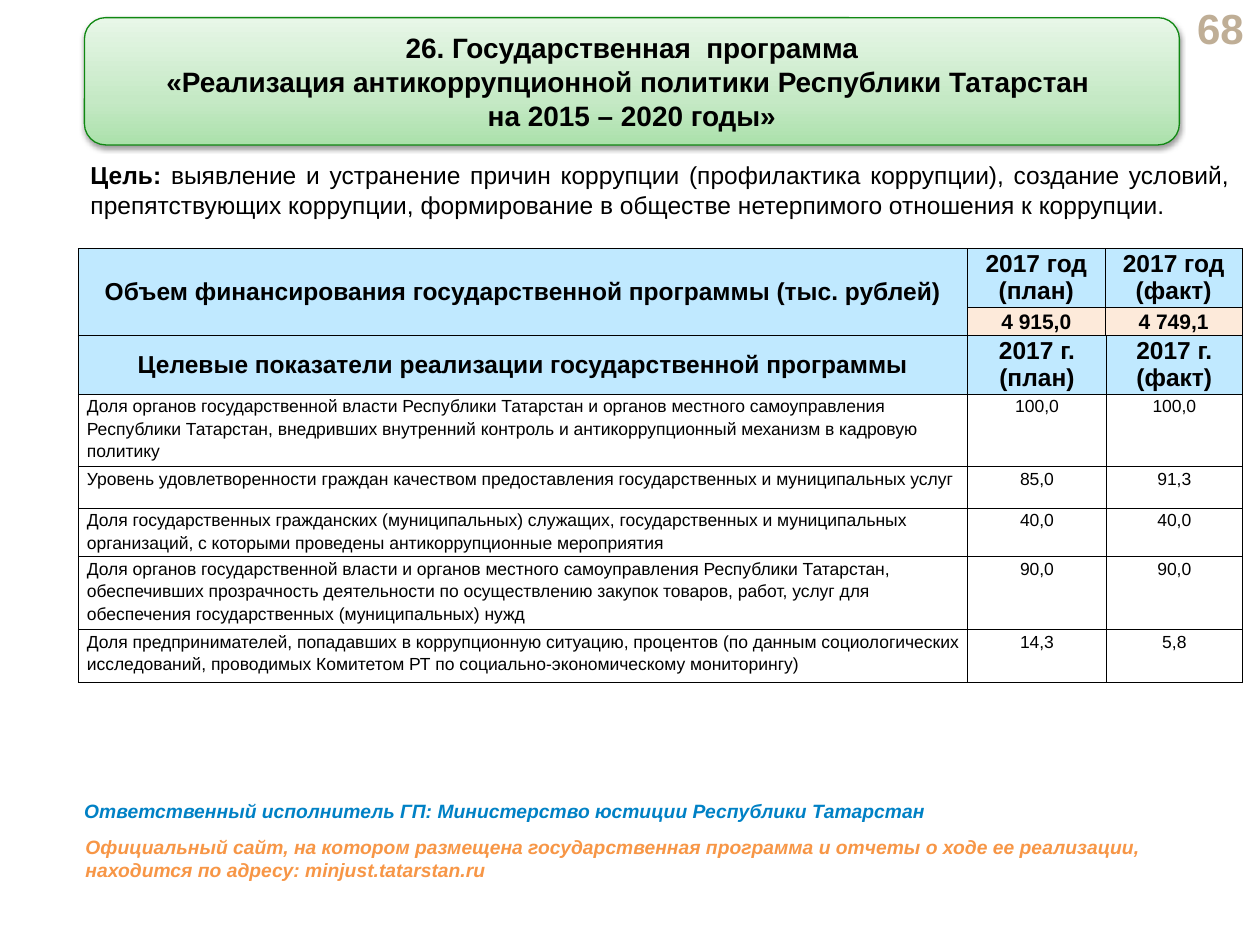
from lxml import etree
from pptx import Presentation
from pptx.dml.color import RGBColor
from pptx.enum import shapes, text
from pptx.oxml import ns
from pptx.util import Inches, Pt

TITLE = [
    "26. Государственная  программа",
    "«Реализация антикоррупционной политики Республики Татарстан ",
    "на 2015 – 2020 годы»",
]
GOAL = [
    ("Цель: ", True),
    ("выявление и устранение причин коррупции (профилактика коррупции), создание условий, "
     "препятствующих коррупции, формирование в обществе нетерпимого отношения к коррупции.", False),
]
FUNDING = [
    ("Объем финансирования государственной программы (тыс. рублей)", "2017 год (план)", "2017 год (факт)"),
    ("", "4 915,0", "4 749,1"),
]
INDICATORS = [
    ("Целевые показатели реализации государственной программы", "2017 г. (план)", "2017 г. (факт)"),
    ("Доля органов государственной власти Республики Татарстан и органов местного самоуправления "
     "Республики Татарстан, внедривших внутренний контроль и антикоррупционный механизм в кадровую "
     "политику", "100,0", "100,0"),
    ("Уровень удовлетворенности граждан качеством предоставления государственных и муниципальных услуг",
     "85,0", "91,3"),
    ("Доля государственных гражданских (муниципальных) служащих, государственных и муниципальных "
     "организаций, с которыми проведены антикоррупционные мероприятия", "40,0", "40,0"),
    ("Доля органов государственной власти и органов местного самоуправления Республики Татарстан, "
     "обеспечивших прозрачность деятельности по осуществлению закупок товаров, работ, услуг для "
     "обеспечения государственных (муниципальных) нужд", "90,0", "90,0"),
    ("Доля предпринимателей, попадавших в коррупционную ситуацию, процентов (по данным социологических "
     "исследований, проводимых Комитетом РТ по социально-экономическому мониторингу)", "14,3", "5,8"),
]
EXECUTOR = "Ответственный исполнитель ГП: Министерство юстиции Республики Татарстан"
SITE = ("Официальный сайт, на котором размещена государственная программа и отчеты о ходе ее реализации, "
        "находится по адресу: minjust.tatarstan.ru")

BLACK, BLUE, PEACH = "000000", "C0E9FF", "FDEADA"
TITLE_STOPS = [(0, "ABE1AB"), (35, "C5E9C5"), (100, "E8F7E8")]
LEFT, CENTER, RIGHT, JUSTIFY = (
    text.PP_ALIGN.LEFT, text.PP_ALIGN.CENTER, text.PP_ALIGN.RIGHT, text.PP_ALIGN.JUSTIFY)
TOP, MIDDLE = text.MSO_ANCHOR.TOP, text.MSO_ANCHOR.MIDDLE


def rgb(value):
    return RGBColor.from_string(value)


def node(parent, tag, **attrs):
    return etree.SubElement(parent, ns.qn(tag), {k: str(v) for k, v in attrs.items()})


def write(tf, lines, size=14, color=BLACK, bold=True, italic=False, align=LEFT, spacing=None):
    tf.word_wrap = True
    for i, line in enumerate(lines):
        p = tf.paragraphs[0] if i == 0 else tf.add_paragraph()
        p.alignment = align
        if spacing:
            p.line_spacing = spacing
        for words, weight in [(line, bold)] if isinstance(line, str) else line:
            r = p.add_run()
            r.text = words
            r.font.name, r.font.size = "Arial", Pt(size)
            r.font.bold, r.font.italic = weight, italic
            r.font.color.rgb = rgb(color)


def add_text(s, box, lines, anchor=TOP, **fmt):
    tf = s.shapes.add_textbox(*map(Inches, box)).text_frame
    tf.vertical_anchor = anchor
    write(tf, lines, **fmt)


def add_title(s, box):
    sp = s.shapes.add_shape(shapes.MSO_SHAPE.ROUNDED_RECTANGLE, *map(Inches, box))
    sp.line.color.rgb, sp.line.width = rgb("108812"), Pt(0.75)
    sp.fill.gradient()
    sp.fill.gradient_angle = 90
    stops = sp._element.spPr.find(".//" + ns.qn("a:gsLst"))
    for old in list(stops):
        stops.remove(old)
    for position, color in TITLE_STOPS:
        node(node(stops, "a:gs", pos=position * 1000), "a:srgbClr", val=color)
    sp.shadow.inherit = False
    effects = sp._element.spPr.find(ns.qn("a:effectLst"))
    shadow = node(effects, "a:outerShdw", blurRad=40000, dist=20000, dir=5400000, rotWithShape=0)
    node(node(shadow, "a:srgbClr", val=BLACK), "a:alpha", val=38000)
    sp.text_frame.vertical_anchor = MIDDLE
    write(sp.text_frame, TITLE, size=16, align=CENTER)


def add_borders(cell):
    tc_pr = cell._tc.get_or_add_tcPr()
    for side in ("a:lnL", "a:lnR", "a:lnT", "a:lnB"):
        line = node(tc_pr, side, w=Pt(0.25))
        node(node(line, "a:solidFill"), "a:srgbClr", val=BLACK)


def add_grid(s, top, rows, widths, heights, styles):
    frame = s.shapes.add_table(len(rows), len(widths), Inches(0.62), Inches(top),
                               Inches(sum(widths)), Inches(sum(heights)))
    table = frame.table
    table.first_row = table.horz_banding = False
    for column, width in zip(table.columns, widths):
        column.width = Inches(width)
    for i, (row, height, style) in enumerate(zip(rows, heights, styles)):
        table.rows[i].height = Inches(height)
        for j, words in enumerate(row):
            cell = table.cell(i, j)
            add_borders(cell)
            cell.margin_left = cell.margin_right = Inches(style["inset"])
            cell.margin_top = cell.margin_bottom = 0
            cell.vertical_anchor = style["anchor"]
            if style["fill"]:
                cell.fill.solid()
                cell.fill.fore_color.rgb = rgb(style["fill"])
            else:
                cell.fill.background()
            if words:
                align = style["label_align"] if j == 0 else CENTER
                write(cell.text_frame, [words], align=align, **style["font"])
    return table


HEAD = dict(fill=BLUE, inset=0.06, anchor=MIDDLE, label_align=CENTER, font=dict(size=14))
AMOUNT = dict(HEAD, fill=PEACH, font=dict(size=12))
BODY = dict(fill=None, inset=0.07, anchor=TOP, label_align=LEFT,
            font=dict(size=10, bold=False, spacing=1.15))


def main():
    prs = Presentation()
    prs.slide_width, prs.slide_height = Inches(10), Inches(7.5)
    s = prs.slides.add_slide(prs.slide_layouts[6])
    add_text(s, (9.33, 0.05, 0.64, 0.34), ["68"], MIDDLE, size=24, color="BFAE96", align=RIGHT)
    funding = add_grid(s, 1.97, FUNDING, (7.06, 1.09, 1.09), (0.4, 0.2), (HEAD, AMOUNT))
    funding.cell(0, 0).merge(funding.cell(1, 0))
    add_grid(s, 2.66, INDICATORS, (7.06, 1.1, 1.08), (0.38, 0.57, 0.33, 0.38, 0.58, 0.42),
             [HEAD] + [BODY] * (len(INDICATORS) - 1))
    add_text(s, (0.62, 1.22, 9.24, 0.57), [GOAL], MIDDLE, align=JUSTIFY)
    add_title(s, (0.67, 0.14, 8.69, 1.01))
    add_text(s, (0.57, 6.29, 9.55, 0.29), [EXECUTOR], size=11, color="0081C5", italic=True)
    add_text(s, (0.58, 6.58, 8.59, 0.43), [SITE], size=11, color="F79646", italic=True)
    prs.save("out.pptx")


if __name__ == "__main__":
    main()
